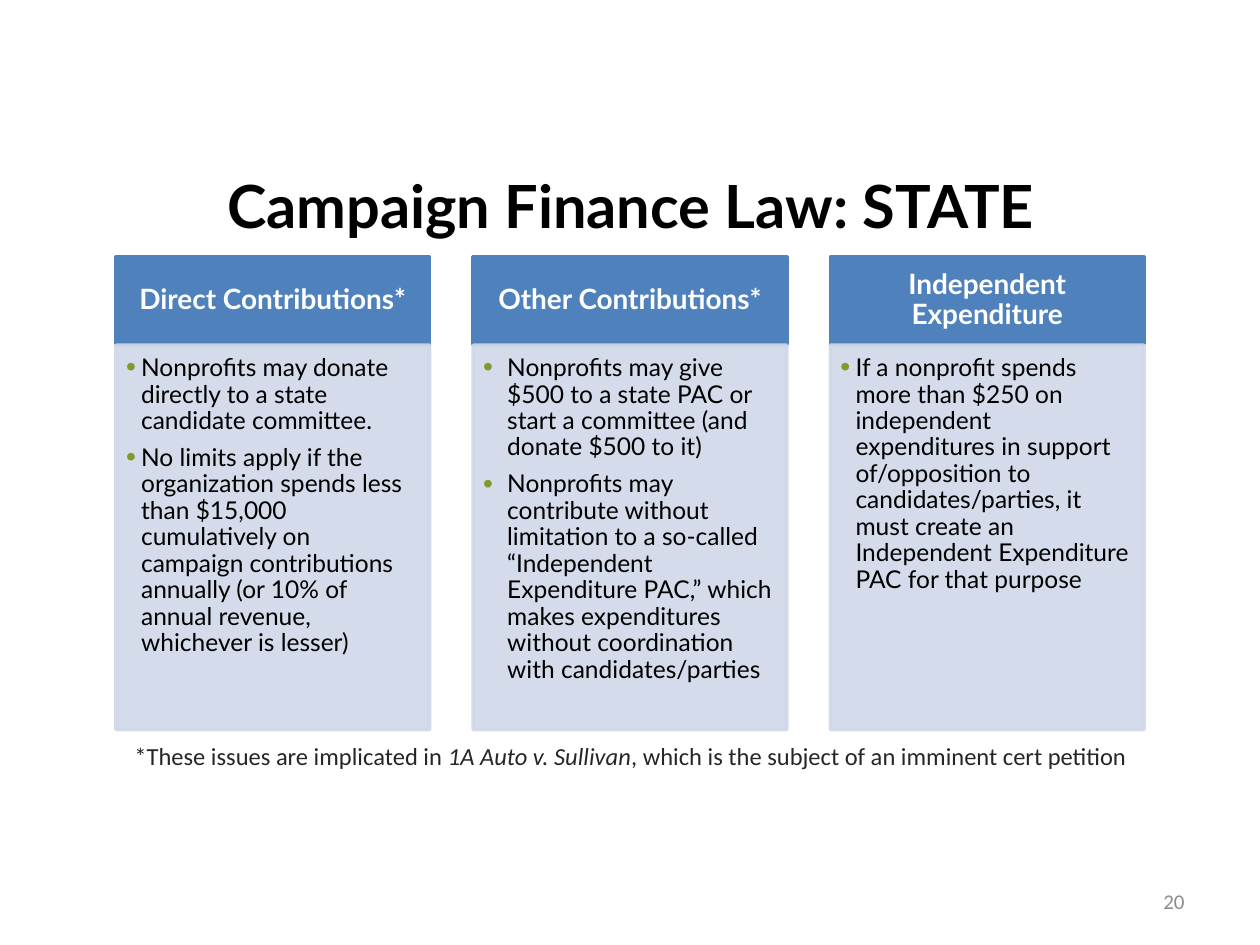
from dataclasses import dataclass

import pptx
import pptx.dml.color
import pptx.enum.shapes
import pptx.enum.text
import pptx.oxml.ns
import pptx.util
from lxml import etree

Inches = pptx.util.Inches
Pt = pptx.util.Pt
RGBColor = pptx.dml.color.RGBColor
ALIGN = pptx.enum.text.PP_ALIGN
ANCHOR = pptx.enum.text.MSO_ANCHOR
qn = pptx.oxml.ns.qn

BLUE = RGBColor(0x4F, 0x81, 0xBD)
PALE = RGBColor(0xD0, 0xD8, 0xE8)
GREEN = RGBColor(0x83, 0x99, 0x2A)
BLACK = RGBColor(0x00, 0x00, 0x00)
WHITE = RGBColor(0xFF, 0xFF, 0xFF)
CHARCOAL = RGBColor(0x26, 0x26, 0x26)
GREY = RGBColor(0x8C, 0x8C, 0x8C)

LEFT, FULL_W = 0.92, 8.17
COL_W, COL_STEP = 2.49, 2.835
HEAD_TOP, HEAD_H = 2.04, 0.69
BODY_TOP, BODY_H = 2.74, 3.05


@dataclass
class Column:
    heading: str
    points: list[str]
    indent: float = 0.12


COLUMNS = [
    Column("Direct Contributions*", [
        "Nonprofits may donate directly to a state candidate committee.",
        "No limits apply if the organization spends less than $15,000 cumulatively on "
        "campaign contributions annually (or 10% of annual revenue, whichever is lesser)",
    ]),
    Column("Other Contributions*", [
        "Nonprofits may give $500 to a state PAC or start a committee (and donate $500 to it)",
        "Nonprofits may contribute without limitation to a so-called “Independent "
        "Expenditure PAC,” which makes expenditures without coordination with "
        "candidates/parties",
    ], indent=0.19),
    Column("Independent Expenditure", [
        "If a nonprofit spends more than $250 on independent expenditures in support "
        "of/opposition to candidates/parties, it must create an Independent Expenditure "
        "PAC for that purpose",
    ]),
]


def add_bullet(p, indent: float) -> None:
    """Give a paragraph a hanging green bullet."""
    pPr = p._p.get_or_add_pPr()
    pPr.set("marL", str(Inches(indent)))
    pPr.set("indent", str(-Inches(indent)))
    color = etree.SubElement(pPr, qn("a:buClr"))
    etree.SubElement(color, qn("a:srgbClr"), val=str(GREEN))
    etree.SubElement(pPr, qn("a:buSzPct"), val="115000")
    etree.SubElement(pPr, qn("a:buFont"), typeface="Arial")
    etree.SubElement(pPr, qn("a:buChar"), char="•")


def write(sp, paragraphs, *, size, color, font="Lato", bold=False, align=ALIGN.LEFT,
          anchor=ANCHOR.TOP, insets=(0.1, 0.05, 0.1, 0.05), spacing=None, after=0,
          indent=None) -> None:
    """Fill a shape with paragraphs, each a list of (text, italic) runs."""
    tf = sp.text_frame
    tf.word_wrap = True
    tf.auto_size = pptx.enum.text.MSO_AUTO_SIZE.NONE
    tf.vertical_anchor = anchor
    tf.margin_left, tf.margin_top, tf.margin_right, tf.margin_bottom = map(Inches, insets)
    for i, runs in enumerate(paragraphs):
        p = tf.add_paragraph() if i else tf.paragraphs[0]
        if indent:
            add_bullet(p, indent)
        p.alignment = align
        p.line_spacing = spacing
        p.space_before = Pt(0)
        p.space_after = Pt(after if i < len(paragraphs) - 1 else 0)
        for text, italic in runs:
            r = p.add_run()
            r.text = text
            r.font.name, r.font.size = font, Pt(size)
            r.font.bold, r.font.italic = bold, italic
            r.font.color.rgb = color


def add_panel(s, x: float, y: float, h: float, color: RGBColor, opacity: int = 100):
    """Draw a column-wide rectangle whose outline matches its fill."""
    sp = s.shapes.add_shape(pptx.enum.shapes.MSO_SHAPE.RECTANGLE,
                            Inches(x), Inches(y), Inches(COL_W), Inches(h))
    sp.shadow.inherit = False
    sp.fill.solid()
    sp.fill.fore_color.rgb = color
    sp.line.color.rgb = color
    sp.line.width = Pt(2)
    if opacity < 100:
        for clr in sp._element.spPr.iter(qn("a:srgbClr")):
            etree.SubElement(clr, qn("a:alpha"), val=str(opacity * 1000))
    return sp


def add_column(s, x: float, column: Column) -> None:
    head = add_panel(s, x, HEAD_TOP, HEAD_H, BLUE)
    write(head, [[(column.heading, False)]], size=16, color=WHITE, bold=True,
          align=ALIGN.CENTER, anchor=ANCHOR.MIDDLE, insets=(0.12, 0.07, 0.12, 0.07),
          spacing=0.9)
    body = add_panel(s, x, BODY_TOP, BODY_H, PALE, opacity=90)
    write(body, [[(point, False)] for point in column.points], size=14, color=BLACK,
          insets=(0.08, 0.08, 0.11, 0.12), spacing=0.9, after=6, indent=column.indent)


def add_text_box(s, x: float, y: float, w: float, h: float):
    return s.shapes.add_textbox(Inches(x), Inches(y), Inches(w), Inches(h))


def main() -> None:
    prs = pptx.Presentation()
    prs.slide_width, prs.slide_height = Inches(10), Inches(7.5)
    s = prs.slides.add_slide(prs.slide_layouts[5])

    # Title
    title = s.shapes.title
    title.left, title.top = Inches(LEFT), Inches(1.25)
    title.width, title.height = Inches(FULL_W), Inches(0.75)
    write(title, [[("Campaign Finance Law: STATE", False)]], size=34, color=BLACK,
          bold=True, align=ALIGN.CENTER, anchor=ANCHOR.MIDDLE)

    # Three columns
    for i, column in enumerate(COLUMNS):
        add_column(s, LEFT + i * COL_STEP, column)

    # Footnote
    write(add_text_box(s, LEFT, 5.83, FULL_W, 0.34),
          [[("*These issues are implicated in ", False), ("1A Auto v. Sullivan", True),
            (", which is the subject of an imminent cert petition", False)]],
          size=14, color=CHARCOAL, font="Calibri", align=ALIGN.CENTER)

    # Slide number
    write(add_text_box(s, 7.17, 6.95, 2.33, 0.4), [[("20", False)]], size=12, color=GREY,
          font="Calibri", align=ALIGN.RIGHT, anchor=ANCHOR.MIDDLE)

    prs.save("out.pptx")


if __name__ == "__main__":
    main()
